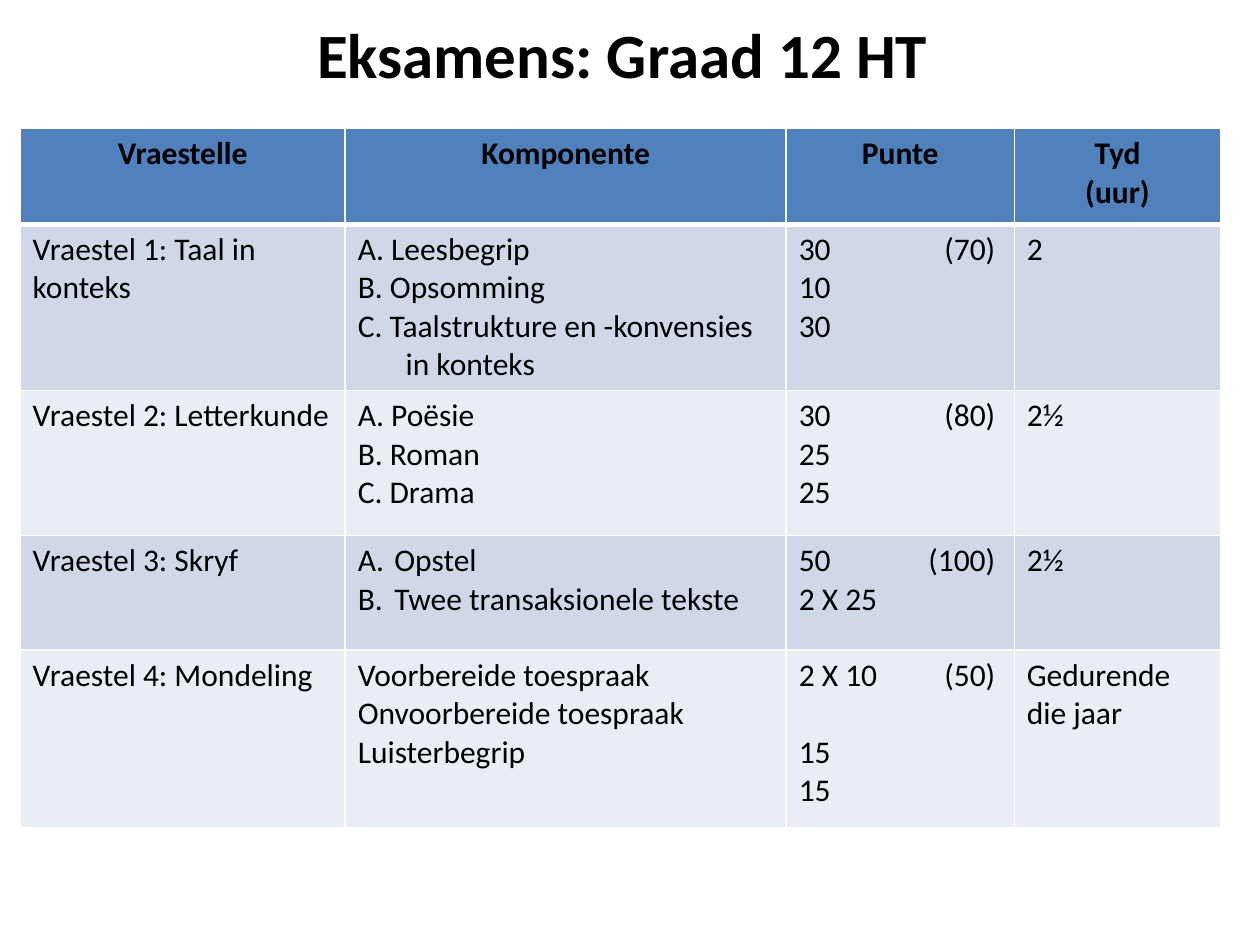
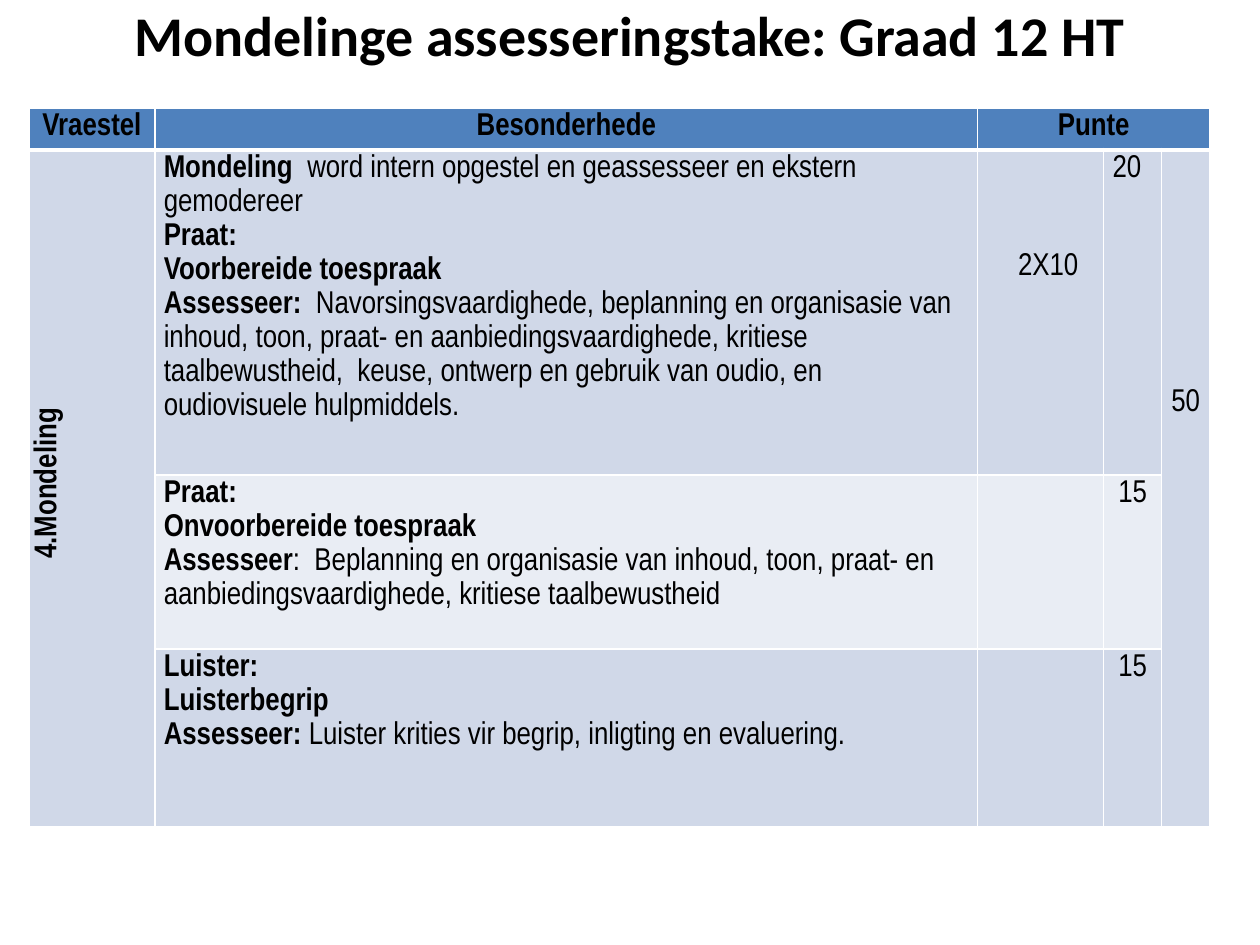
"""Builds the Graad 12 HT exam overview and the oral assessment tasks."""
from dataclasses import dataclass

from lxml import etree
from pptx import Presentation
from pptx import util as u
from pptx.dml.color import RGBColor
from pptx.enum import text
from pptx.oxml import ns

COLOURS = {"ink": "000000", "rule": "FFFFFF", "header": "4F81BD",
           "dark": "D0D8E8", "light": "E9EDF4"}
WIDTH, HEIGHT = u.Inches(10), u.Inches(7.5)
LEFT, CENTRE = text.PP_ALIGN.LEFT, text.PP_ALIGN.CENTER
BODY_SIZE, THIN, THICK = 18, 1, 3
TITLE_ONLY = 5


@dataclass(frozen=True)
class Line:
    """One paragraph: a bold lead, then plain words; lengths in % of width."""
    plain: str = ""
    strong: str = ""
    align: text.PP_ALIGN = LEFT
    indent: float = 0
    hanging: bool = False
    numbered: bool = False
    tab: float = 0
    before: float = 0
    after: float = 0


@dataclass(frozen=True)
class Cell:
    """A table cell with its span; drop is a top inset in % of height."""
    lines: tuple[Line, ...] = ()
    rows: int = 1
    columns: int = 1
    drop: float | None = None
    upright: bool = False


@dataclass(frozen=True)
class Heading:
    """A slide title with its box in % of the slide."""
    words: str
    size: int
    left: float
    width: float
    height: float


@dataclass(frozen=True)
class Grid:
    """A table: origin, columns and rows in % of the slide, and its style."""
    left: float
    top: float
    columns: tuple[float, ...]
    rows: tuple[float, ...]
    cells: tuple[tuple[Cell | None, ...], ...]
    font: str
    spacing: float = 1.0
    inset: tuple[float, float] = (1, 0.67)


def across(share: float) -> u.Emu:
    """Return a percentage of the slide's width."""
    return u.Emu(round(WIDTH * share / 100))


def down(share: float) -> u.Emu:
    """Return a percentage of the slide's height."""
    return u.Emu(round(HEIGHT * share / 100))


def child(parent, tag: str, **attributes):
    """Append a drawing element and return it."""
    return etree.SubElement(parent, ns.qn(f"a:{tag}"), attributes)


def plain(*words: str) -> Cell:
    """Return a cell of plain lines."""
    return Cell(tuple(Line(word) for word in words))


def centred(words: str) -> Cell:
    """Return a cell with one plain centred line."""
    return Cell((Line(words, align=CENTRE),))


def header(*words: str, columns: int = 1) -> Cell:
    """Return a bold centred header cell."""
    return Cell(tuple(Line(strong=word, align=CENTRE) for word in words),
                columns=columns)


def components(*words: str, numbered: bool = False) -> Cell:
    """Return a cell of lettered exam components."""
    indent = 2.9 if numbered else 3.8
    return Cell(tuple(Line(word, indent=indent, hanging=True, numbered=numbered)
                      for word in words))


def marks(first: str, total: str, *others: str, gap: float = 0) -> Cell:
    """Return marks per component, with the paper's total at the right."""
    rest = tuple(Line(mark, before=0 if i else gap)
                 for i, mark in enumerate(others))
    return Cell((Line(f"{first}\t({total})", tab=15.6), *rest))


def style_run(run, font: str, size: float, bold: bool) -> None:
    """Give a run its face, size, weight and ink."""
    run.font.name, run.font.size, run.font.bold = font, u.Pt(size), bold
    run.font.color.rgb = RGBColor.from_string(COLOURS["ink"])


def write_line(paragraph, line: Line, font: str, spacing: float) -> None:
    """Fill and format one paragraph."""
    properties = paragraph._p.get_or_add_pPr()
    if line.indent:
        properties.set("marL", str(across(line.indent)))
        properties.set("indent", str(-across(line.indent) if line.hanging else 0))
    if line.numbered:
        child(properties, "buFont", typeface="+mj-lt")
        child(properties, "buAutoNum", type="alphaUcPeriod")
    if line.tab:
        stops = child(properties, "tabLst")
        child(stops, "tab", pos=str(across(line.tab)), algn="r")
    paragraph.alignment = line.align
    paragraph.line_spacing = spacing
    if line.before:
        paragraph.space_before = u.Pt(line.before)
    if line.after:
        paragraph.space_after = u.Pt(line.after)
    for words, bold in ((line.strong, True), (line.plain, False)):
        if words:
            run = paragraph.add_run()
            run.text = words
            style_run(run, font, BODY_SIZE, bold)


def rule_cell(cell, row: int) -> None:
    """Draw the white rules, heavier under the header row."""
    edges = {"lnL": THIN, "lnR": THIN, "lnT": THICK if row == 1 else THIN,
             "lnB": THICK if row == 0 else THIN}
    for tag, points in edges.items():
        edge = child(cell._tc.get_or_add_tcPr(), tag, w=str(u.Pt(points)))
        child(child(edge, "solidFill"), "srgbClr", val=COLOURS["rule"])


def paint_cell(cell, row: int) -> None:
    """Fill a cell by its row: header, then alternating bands."""
    band = "header" if row == 0 else "dark" if row % 2 else "light"
    cell.fill.solid()
    cell.fill.fore_color.rgb = RGBColor.from_string(COLOURS[band])


def write_cell(cell, content: Cell, grid: Grid) -> None:
    """Place a cell's text with its insets and direction."""
    side, edge = grid.inset
    cell.margin_left = cell.margin_right = across(side)
    cell.margin_top = down(edge if content.drop is None else content.drop)
    cell.margin_bottom = down(edge)
    if content.upright:
        cell.vertical_anchor = text.MSO_ANCHOR.MIDDLE
        cell._tc.get_or_add_tcPr().set("vert", "vert270")
    frame = cell.text_frame
    for i, line in enumerate(content.lines):
        paragraph = frame.add_paragraph() if i else frame.paragraphs[0]
        write_line(paragraph, line, grid.font, grid.spacing)


def draw_grid(slide, grid: Grid) -> None:
    """Add a table with its sizes, bands, spans and text."""
    table = slide.shapes.add_table(
        len(grid.rows), len(grid.columns), across(grid.left), down(grid.top),
        across(sum(grid.columns)), down(sum(grid.rows))).table
    for column, share in zip(table.columns, grid.columns):
        column.width = across(share)
    for row, share in zip(table.rows, grid.rows):
        row.height = down(share)
    for r, contents in enumerate(grid.cells):
        for c, content in enumerate(contents):
            cell = table.cell(r, c)
            rule_cell(cell, r)
            paint_cell(cell, r)
            if content is None:
                continue
            write_cell(cell, content, grid)
            if content.rows * content.columns > 1:
                cell.merge(table.cell(r + content.rows - 1,
                                      c + content.columns - 1))


def draw_heading(slide, heading: Heading) -> None:
    """Move and format the title placeholder."""
    title = slide.shapes.title
    title.left, title.top = across(heading.left), 0
    title.width, title.height = across(heading.width), down(heading.height)
    frame = title.text_frame
    frame.text = heading.words
    frame.word_wrap, frame.auto_size = True, text.MSO_AUTO_SIZE.NONE
    frame.vertical_anchor = text.MSO_ANCHOR.MIDDLE
    frame.paragraphs[0].alignment = CENTRE
    style_run(frame.paragraphs[0].runs[0], "Calibri", heading.size, True)


EXAMS = Grid(
    left=1.6, top=13.6, columns=(25.8, 35, 18.1, 16.4),
    rows=(10.13, 17.6, 15.33, 12.13, 18.8), font="Calibri",
    cells=(
        (header("Vraestelle"), header("Komponente"), header("Punte"),
         header("Tyd", "(uur)")),
        (plain("Vraestel 1: Taal in konteks"),
         components("A. Leesbegrip", "B. Opsomming",
                    "C. Taalstrukture en -konvensies in konteks"),
         marks("30", "70", "10", "30"), plain("2")),
        (plain("Vraestel 2: Letterkunde"),
         components("A. Poësie", "B. Roman", "C. Drama"),
         marks("30", "80", "25", "25"), plain("2½")),
        (plain("Vraestel 3: Skryf"),
         components("Opstel", "Twee transaksionele tekste", numbered=True),
         marks("50", "100", "2 X 25"), plain("2½")),
        (plain("Vraestel 4: Mondeling"),
         plain("Voorbereide toespraak", "Onvoorbereide toespraak",
               "Luisterbegrip"),
         marks("2 X 10", "50", "15", "15", gap=22),
         plain("Gedurende die jaar")),
    ))

ORAL_TASKS = Grid(
    left=2.3, top=11.47, columns=(10, 65.3, 10, 4.6, 3.8),
    rows=(4.4, 34.4, 18.4, 18.8), font="Arial Narrow", spacing=1.15,
    inset=(0.7, 0),
    cells=(
        (header("Vraestel"), header("Besonderhede"),
         header("Punte", columns=3), None, None),
        (Cell((Line(strong="4.Mondeling", align=CENTRE, indent=0.8, after=10),),
              rows=3, upright=True),
         Cell((Line("word intern opgestel en geassesseer en ekstern gemodereer",
                    "Mondeling  "),
               Line(strong="Praat:"),
               Line(strong="Voorbereide toespraak"),
               Line("Navorsingsvaardighede, beplanning en organisasie van "
                    "inhoud, toon, praat- en aanbiedingsvaardighede, kritiese  "
                    "taalbewustheid,  keuse, ontwerp en gebruik van oudio, en "
                    "oudiovisuele hulpmiddels.", "Assesseer:  "))),
         Cell((Line("2X10", indent=2.5),), drop=10.4),
         plain("20"),
         Cell((Line("50", align=CENTRE),), rows=3, drop=24.8)),
        (None,
         Cell((Line(strong="Praat:"),
               Line(strong="Onvoorbereide toespraak"),
               Line(":  Beplanning en organisasie van inhoud, toon, praat- en "
                    "aanbiedingsvaardighede, kritiese taalbewustheid",
                    "Assesseer"))),
         Cell(), centred("15"), None),
        (None,
         Cell((Line(strong="Luister:"),
               Line(strong="Luisterbegrip"),
               Line("Luister krities vir begrip, inligting en evaluering.",
                    "Assesseer: "))),
         Cell(), centred("15"), None),
    ))

SLIDES = (
    (Heading("Eksamens: Graad 12 HT", 36, 4.4, 90, 11.2), EXAMS),
    (Heading("Mondelinge assesseringstake: Graad 12 HT", 32, 0, 100, 7.33),
     ORAL_TASKS),
)


def main() -> None:
    """Build and save the presentation."""
    deck = Presentation()
    deck.slide_width, deck.slide_height = WIDTH, HEIGHT
    for heading, grid in SLIDES:
        slide = deck.slides.add_slide(deck.slide_layouts[TITLE_ONLY])
        draw_heading(slide, heading)
        draw_grid(slide, grid)
    deck.save("out.pptx")


if __name__ == "__main__":
    main()
